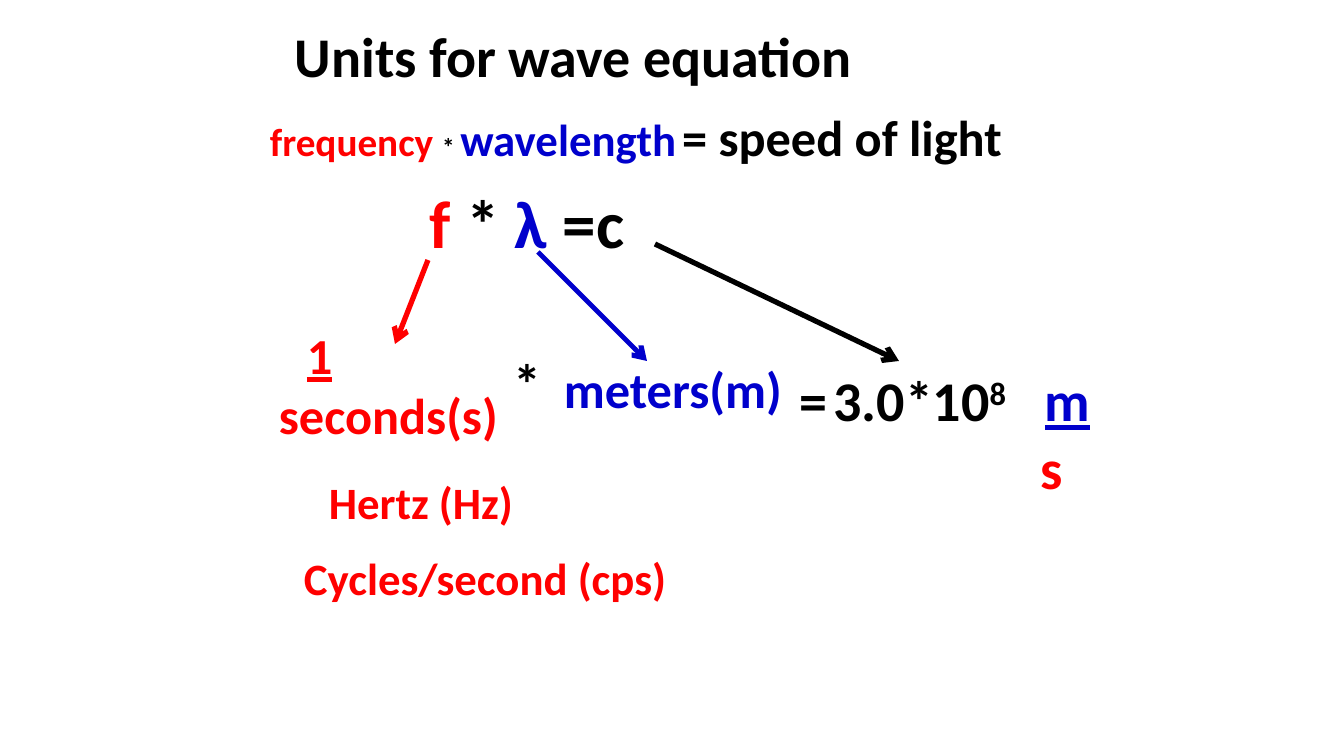
from lxml.etree import SubElement
from pptx import Presentation
from pptx.dml.color import RGBColor
from pptx.enum.shapes import MSO_CONNECTOR
from pptx.enum.text import MSO_AUTO_SIZE
from pptx.oxml.ns import qn
from pptx.util import Pt

EMU_PER_PX = 914400 / 100.8
FONT = "Calibri"
RED = RGBColor(0xFF, 0x00, 0x00)
BLUE = RGBColor(0x00, 0x00, 0xCC)
BLACK = RGBColor(0x00, 0x00, 0x00)


def px(length):
    return round(length * EMU_PER_PX)


def add_tab_stop(paragraph, position):
    tab_list = SubElement(paragraph._p.get_or_add_pPr(), qn("a:tabLst"))
    SubElement(tab_list, qn("a:tab"), pos=str(px(position)), algn="l")


def add_styled_run(paragraph, text, size, color, underline=False, superscript=False):
    run = paragraph.add_run()
    run.text = text
    run.font.name = FONT
    run.font.size = Pt(size)
    run.font.bold = True
    run.font.color.rgb = color
    if underline:
        run.font.underline = True
    if superscript:
        run.font._element.set("baseline", "30000")


def add_label(slide, box, *lines, tab_stops=()):
    """Add a text box; each line is a list of run descriptions."""
    shape = slide.shapes.add_textbox(*map(px, box))
    text_frame = shape.text_frame
    text_frame.word_wrap = True
    text_frame.auto_size = MSO_AUTO_SIZE.SHAPE_TO_FIT_TEXT
    for index, runs in enumerate(lines):
        paragraph = text_frame.add_paragraph() if index else text_frame.paragraphs[0]
        if index < len(tab_stops):
            add_tab_stop(paragraph, tab_stops[index])
        for run in runs:
            add_styled_run(paragraph, *run)


def add_arrow(slide, start, end, color, width):
    connector = slide.shapes.add_connector(
        MSO_CONNECTOR.STRAIGHT, *map(px, start + end))
    connector.line.color.rgb = color
    connector.line.width = Pt(width)
    SubElement(connector.line._get_or_add_ln(), qn("a:tailEnd"), type="arrow")
    SubElement(connector._element.spPr, qn("a:effectLst"))


def main():
    presentation = Presentation()
    presentation.slide_width = px(1344)
    presentation.slide_height = px(756)
    slide = presentation.slides.add_slide(presentation.slide_layouts[6])

    # Title and the equation in words and symbols
    add_label(slide, (285, 17, 790, 78), [("Units for wave equation", 40, BLACK)])
    add_label(slide, (260, 101, 874, 71), [
        ("frequency ", 28, RED), ("* ", 18, BLACK), ("wavelength", 32, BLUE),
        (" ", 18, BLACK), ("= speed of light", 36, BLACK)])
    add_label(slide, (420, 176, 294, 92), [
        ("f ", 48, RED), ("* ", 48, BLACK), ("λ ", 48, BLUE), ("=c", 48, BLACK)])

    # Units of each term
    add_label(slide, (269, 319, 252, 132),
              [("\t", 18, RED, True), ("1", 36, RED, True)],
              [("seconds(s)", 36, RED)],
              tab_stops=(28,))
    add_label(slide, (504, 344, 42, 78), [("*", 40, BLACK)])
    add_label(slide, (554, 353, 244, 71), [("meters(m)", 36, BLUE)])
    add_label(slide, (790, 361, 353, 146),
              [("=", 40, BLACK), (" ", 18, BLACK), ("3.0*10", 40, BLACK),
               ("8", 40, BLACK, False, True), ("\t", 40, BLACK),
               ("m", 40, BLUE, True)],
              [("\t", 40, BLACK), ("s", 40, RED)],
              tab_stops=(245, 241))

    # Other names for the frequency unit
    add_label(slide, (319, 470, 235, 65), [("Hertz (Hz)", 32, RED)])
    add_label(slide, (294, 546, 395, 65), [("Cycles/second (cps)", 32, RED)])

    # Arrows from symbols to units
    add_arrow(slide, (428, 260), (395, 344), RED, 3.75)
    add_arrow(slide, (538, 252), (647, 361), BLUE, 3.5)
    add_arrow(slide, (655, 244), (899, 361), BLACK, 3.75)

    presentation.save("out.pptx")


if __name__ == "__main__":
    main()
